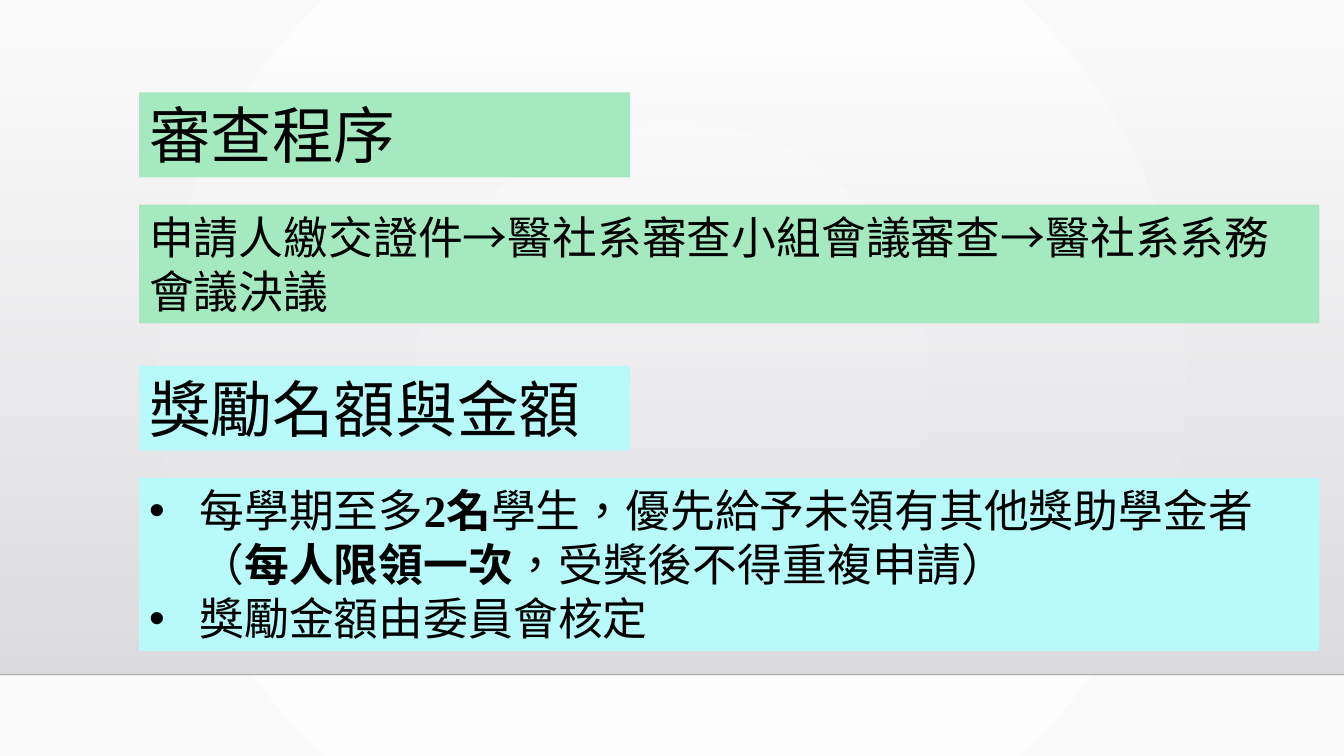
from dataclasses import dataclass

from lxml.etree import SubElement
from pptx import Presentation
from pptx.dml.color import RGBColor
from pptx.enum.lang import MSO_LANGUAGE_ID as Lang
from pptx.enum.shapes import MSO_CONNECTOR as Link, MSO_SHAPE as Kind
from pptx.enum.text import MSO_ANCHOR as Anchor, MSO_AUTO_SIZE as Auto, PP_ALIGN as Align
from pptx.oxml.ns import qn
from pptx.util import Cm, Pt

BLACK = RGBColor(0x00, 0x00, 0x00)
WHITE = RGBColor(0xFF, 0xFF, 0xFF)
PALE = RGBColor(0xFA, 0xFA, 0xFA)
HAZE = RGBColor(0xDC, 0xDC, 0xE0)
SMOKE = RGBColor(0xDE, 0xDE, 0xE2)
GREEN = RGBColor(0xA4, 0xE9, 0xBF)
CYAN = RGBColor(0xB8, 0xFA, 0xFA)

FONT = "Times New Roman"
WIDTH, HEIGHT = Cm(33.87), Cm(19.05)
LEFT = Cm(3.51)
HEAD_W, HEAD_H, BODY_W = Cm(12.37), Cm(2.14), Cm(29.74)
BODY_DROP = Cm(2.83)
FLOOR = Cm(17)
INDENT = Cm(1.27)


@dataclass
class Run:
    text: str
    bold: bool = False


@dataclass
class Section:
    top: float
    color: RGBColor
    title: str
    depth: float
    body: list[list[Run]]
    bullets: bool = False


SECTIONS = [
    Section(2.33, GREEN, "審查程序", 2.99,
            [[Run("申請人繳交證件→醫社系審查小組會議審查→醫社系系務會議決議")]]),
    Section(9.22, CYAN, "獎勵名額與金額", 4.36,
            [[Run("每學期至多"), Run("2名", True),
              Run("學生，優先給予未領有其他獎助學金者（"),
              Run("每人限領一次", True), Run("，受獎後不得重複申請）")],
             [Run("獎勵金額由委員會核定")]], bullets=True),
]


def set_alpha(color, percent: int) -> None:
    SubElement(color, qn("a:alpha"), val=str(percent * 1000))


def blend(fill, first: RGBColor, last: RGBColor) -> None:
    """Give the fill a two-stop gradient."""
    fill.gradient()
    for stop, color in zip(fill.gradient_stops, (first, last)):
        stop.color.rgb = color


def paint_back(slide) -> None:
    """Round gradient behind everything."""
    fill = slide.background.fill
    blend(fill, WHITE, PALE)
    grad = slide.background._cSld.find(".//" + qn("a:gradFill"))
    grad.remove(grad.find(qn("a:lin")))
    ring = SubElement(grad, qn("a:path"), path="circle")
    SubElement(ring, qn("a:fillToRect"), l="50000", t="50000", r="50000", b="50000")


def add_wall(slide) -> None:
    """Band that fades in downwards, closed by a thin floor line."""
    top = Cm(1.3)
    wall = slide.shapes.add_shape(Kind.RECTANGLE, 0, top, WIDTH, FLOOR - top)
    wall.shadow.inherit = False
    wall.line.fill.background()
    blend(wall.fill, HAZE, SMOKE)
    wall.fill.gradient_angle = 270
    set_alpha(wall._element.spPr.find(".//" + qn("a:srgbClr")), 0)

    floor = slide.shapes.add_connector(Link.STRAIGHT, 0, FLOOR, WIDTH, FLOOR)
    floor.line.width = Pt(1)
    floor.line.color.rgb = BLACK
    props = floor._element.spPr
    set_alpha(props.find(".//" + qn("a:srgbClr")), 20)
    SubElement(props, qn("a:effectLst"))


def add_bullet(para) -> None:
    props = para._p.get_or_add_pPr()
    props.set("marL", str(INDENT))
    props.set("indent", str(-INDENT))
    SubElement(props, qn("a:buFont"), typeface="Arial")
    SubElement(props, qn("a:buChar"), char="•")


def add_panel(slide, top: int, width: int, height: int, color: RGBColor,
              size: int, lines: list[list[Run]], bullets: bool = False) -> None:
    panel = slide.shapes.add_shape(Kind.RECTANGLE, LEFT, top, width, height)
    panel.shadow.inherit = False
    panel.fill.solid()
    panel.fill.fore_color.rgb = color
    panel.line.fill.background()
    frame = panel.text_frame
    frame.word_wrap = True
    frame.auto_size = Auto.SHAPE_TO_FIT_TEXT
    frame.vertical_anchor = Anchor.TOP
    for i, line in enumerate(lines):
        para = frame.add_paragraph() if i else frame.paragraphs[0]
        para.alignment = Align.LEFT
        if bullets:
            add_bullet(para)
        para.font.name = FONT
        para.font.size = Pt(size)
        para.font.color.rgb = BLACK
        for part in line:
            run = para.add_run()
            run.text = part.text
            run.font.language_id = Lang.TRADITIONAL_CHINESE
            if part.bold:
                run.font.bold = True


def add_section(slide, part: Section) -> None:
    top = Cm(part.top)
    add_panel(slide, top, HEAD_W, HEAD_H, part.color, 44, [[Run(part.title)]])
    add_panel(slide, top + BODY_DROP, BODY_W, Cm(part.depth), part.color, 32,
              part.body, part.bullets)


def main() -> None:
    deck = Presentation()
    deck.slide_width, deck.slide_height = WIDTH, HEIGHT
    slide = deck.slides.add_slide(deck.slide_layouts[6])
    paint_back(slide)
    add_wall(slide)
    for part in SECTIONS:
        add_section(slide, part)
    deck.save("out.pptx")


if __name__ == "__main__":
    main()
